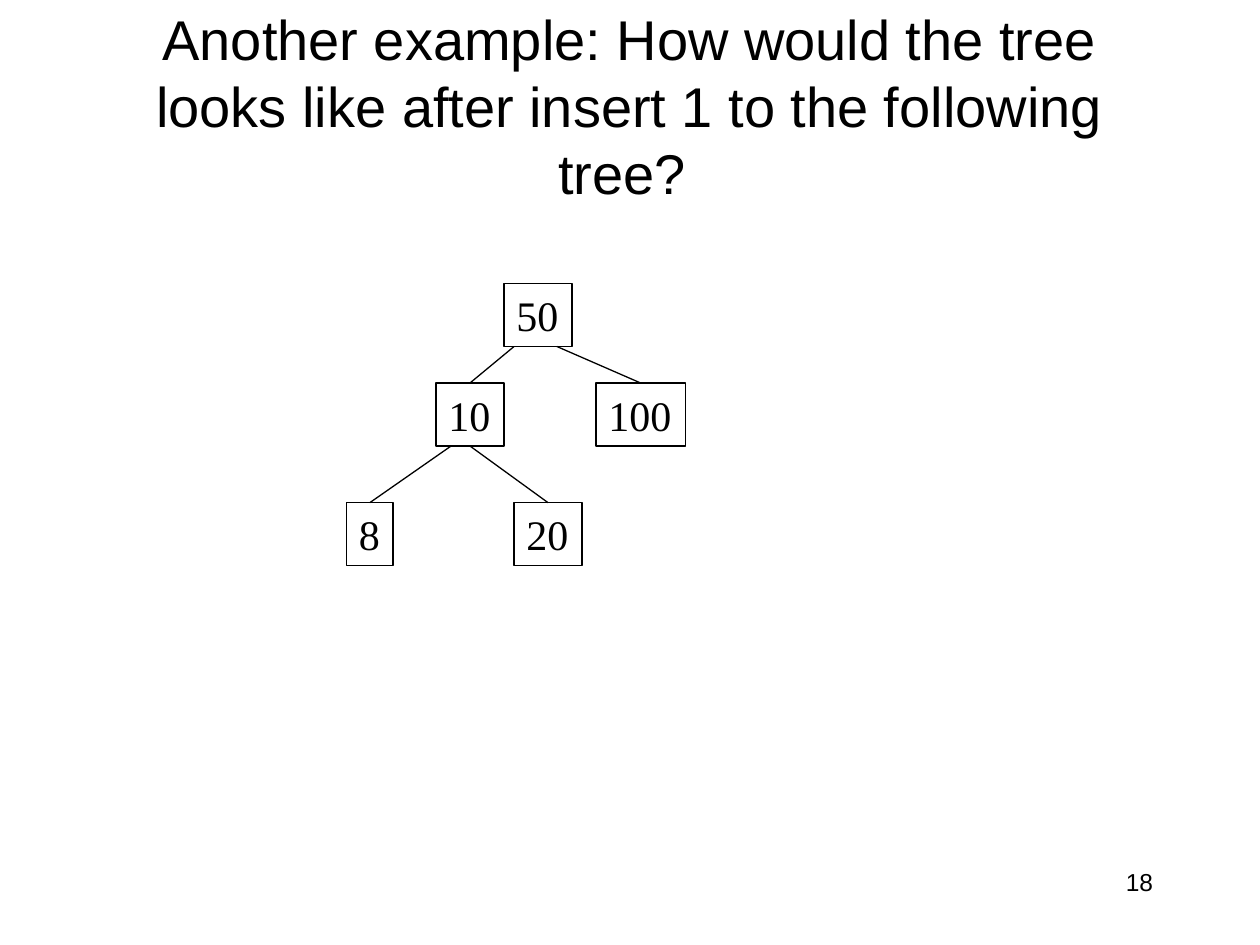
from pptx import Presentation
from pptx.dml.color import RGBColor
from pptx.enum.shapes import MSO_CONNECTOR, MSO_SHAPE
from pptx.enum.text import MSO_ANCHOR, MSO_AUTO_SIZE, PP_ALIGN
from pptx.oxml.ns import qn
from pptx.util import Inches, Pt

BLACK = "000000"
NODE_HEIGHT = 0.5
LEVEL_TOPS = [2.25, 3.04, 3.99]
NODE_WIDTHS = {1: 0.37, 2: 0.54, 3: 0.71}  # by number of digits

# key: (left, level)
NODES = {"50": (4, 0), "100": (4.73, 1), "10": (3.46, 1), "8": (2.75, 2), "20": (4.08, 2)}
# parent, child, x where the edge leaves the parent (None: middle of its bottom)
EDGES = [("50", "10", 4.08), ("50", "100", 4.42), ("10", "8", 3.58), ("10", "20", None)]


def color(hex_string):
    return RGBColor.from_string(hex_string)


def write_text(shape, text, size, font="Arial", align=PP_ALIGN.LEFT,
               anchor=MSO_ANCHOR.TOP, wrap=True, auto_size=MSO_AUTO_SIZE.NONE):
    frame = shape.text_frame
    frame.word_wrap = wrap
    frame.auto_size = auto_size
    frame.vertical_anchor = anchor
    paragraph = frame.paragraphs[0]
    paragraph.alignment = align
    run = paragraph.add_run()
    run.text = text
    run.font.size = Pt(size)
    run.font.name = font
    run.font.color.rgb = color(BLACK)


def add_text(slide, text, left, top, width, height, **text_format):
    box = slide.shapes.add_textbox(Inches(left), Inches(top), Inches(width), Inches(height))
    write_text(box, text, **text_format)


def set_line(shape):
    shape.line.color.rgb = color(BLACK)
    shape.line.width = Pt(0.75)


def add_node(slide, key, left, level):
    node = slide.shapes.add_shape(
        MSO_SHAPE.RECTANGLE, Inches(left), Inches(LEVEL_TOPS[level]),
        Inches(NODE_WIDTHS[len(key)]), Inches(NODE_HEIGHT))
    node.shadow.inherit = False
    node.fill.background()
    set_line(node)
    write_text(node, key, size=24, font="Times New Roman", wrap=False,
               auto_size=MSO_AUTO_SIZE.SHAPE_TO_FIT_TEXT)
    return node


def add_edge(slide, parent, child, start_x):
    start = parent.left + parent.width // 2 if start_x is None else Inches(start_x)
    edge = slide.shapes.add_connector(
        MSO_CONNECTOR.STRAIGHT, start, parent.top + parent.height,
        child.left + child.width // 2, child.top)
    if start_x is None:
        edge.begin_connect(parent, 2)
    edge.end_connect(child, 0)
    set_line(edge)
    properties = edge.element.spPr
    properties.append(properties.makeelement(qn("a:effectLst"), {}))


def main():
    presentation = Presentation()
    presentation.slide_width = Inches(10)
    presentation.slide_height = Inches(7.5)
    slide = presentation.slides.add_slide(presentation.slide_layouts[6])

    # Title and slide number
    add_text(slide, "Another example: How would the tree looks like after insert 1 "
             "to the following tree? ", 0.75, 0.42, 8.5, 0.83,
             size=32, align=PP_ALIGN.CENTER, anchor=MSO_ANCHOR.MIDDLE)
    add_text(slide, "18", 7.17, 6.83, 2.08, 0.5, size=14, align=PP_ALIGN.RIGHT)

    # Binary search tree
    nodes = {key: add_node(slide, key, *place) for key, place in NODES.items()}
    for parent, child, start_x in EDGES:
        add_edge(slide, nodes[parent], nodes[child], start_x)

    presentation.save("out.pptx")


if __name__ == "__main__":
    main()
